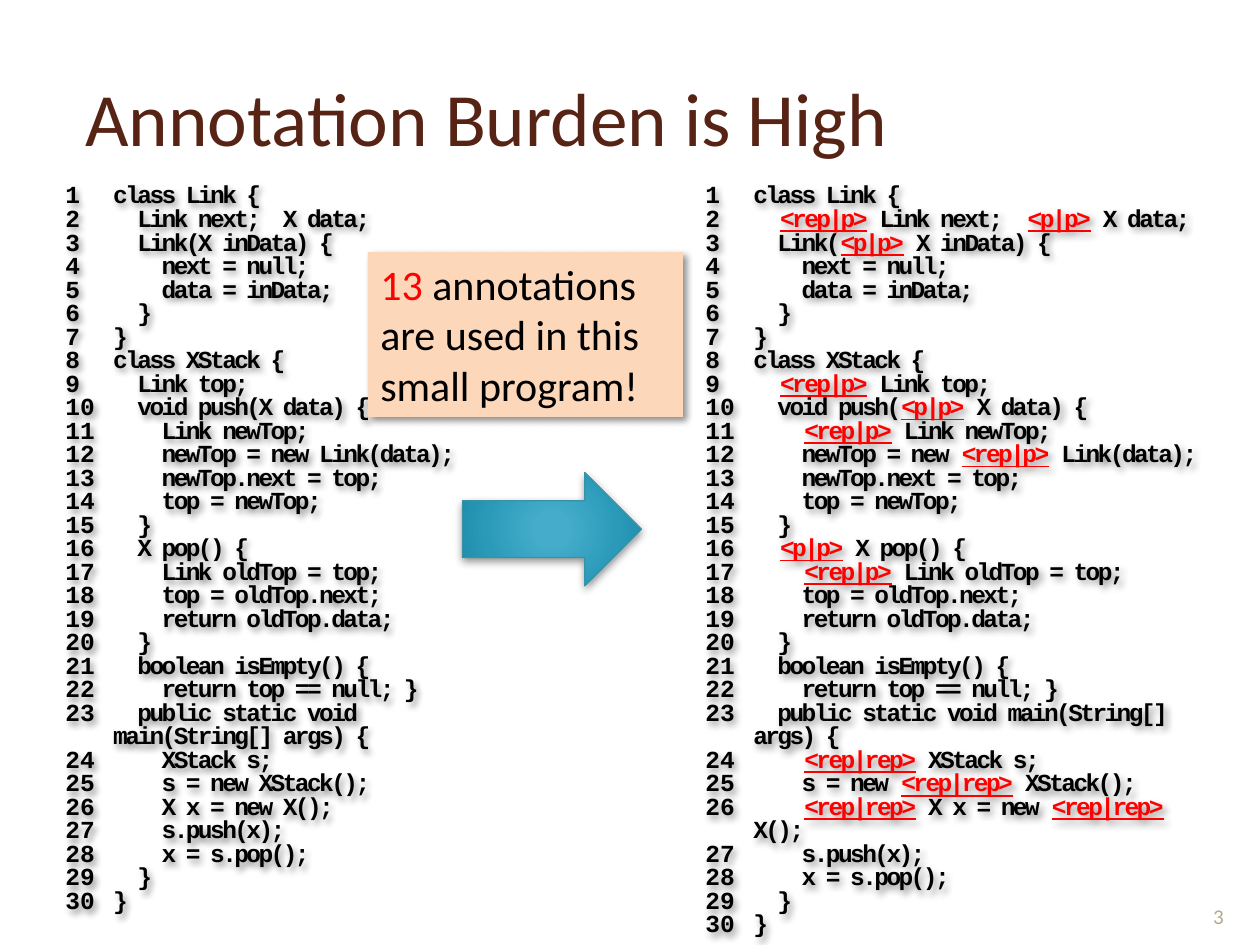
from lxml import etree
from pptx import Presentation
from pptx.dml.color import RGBColor
from pptx.enum.shapes import MSO_SHAPE
from pptx.enum.text import MSO_ANCHOR, MSO_AUTO_SIZE, PP_ALIGN
from pptx.oxml import parse_xml
from pptx.oxml.ns import nsdecls, qn
from pptx.util import Inches, Pt

RIGHT_ARROW, RECTANGLE = MSO_SHAPE.RIGHT_ARROW, MSO_SHAPE.RECTANGLE
MIDDLE, BOTTOM, TOP = MSO_ANCHOR.MIDDLE, MSO_ANCHOR.BOTTOM, MSO_ANCHOR.TOP
LEFT, CENTER = PP_ALIGN.LEFT, PP_ALIGN.CENTER
GROW, FIXED = MSO_AUTO_SIZE.SHAPE_TO_FIT_TEXT, MSO_AUTO_SIZE.NONE

COLORS = {
    "title": "572314",
    "code": "000000",
    "annotation": "FF0000",
    "callout": "FDD7BA",
    "arrow_line": "3891A7",
    "number": "B6A98A",
}
ARROW_STOPS = [(0, "45ACCC"), (15, "45ACCB"), (62, "2B9AB9"), (97, "1C8AA7"), (100, "0E89A7")]

TITLE_FONT = {"name": "Calibri", "size": Pt(43)}
CALLOUT_FONT = {"name": "Calibri", "size": Pt(24)}
NUMBER_FONT = {"name": "Calibri", "size": Pt(12)}
CODE_FONT = {"name": "Courier New", "size": Pt(14), "bold": True}

ANNOTATIONS = ("<rep|rep>", "<rep|p>", "<p|p>")
ANNOTATED_CODE = """class Link {
  <rep|p> Link next;  <p|p> X data;
  Link(<p|p> X inData) {
    next = null;
    data = inData;
  }
}
class XStack {
  <rep|p> Link top;
  void push(<p|p> X data) {
    <rep|p> Link newTop;
    newTop = new <rep|p> Link(data);
    newTop.next = top;
    top = newTop;
  }
  <p|p> X pop() {
    <rep|p> Link oldTop = top;
    top = oldTop.next;
    return oldTop.data;
  }
  boolean isEmpty() {
    return top == null; }
  public static void main(String[] args) {
    <rep|rep> XStack s;
    s = new <rep|rep> XStack();
    <rep|rep> X x = new <rep|rep> X();
    s.push(x);
    x = s.pop();
  }
}"""


def apply_format(target, values):
    for attribute, value in values.items():
        setattr(target, attribute, value)


def add_run(paragraph, text, font, color):
    run = paragraph.add_run()
    run.text = text
    apply_format(run.font, font)
    run.font.color.rgb = RGBColor.from_string(COLORS[color])
    return run


def add_text_box(slide, box, anchor=TOP, auto_size=FIXED):
    area = slide.shapes.add_textbox(*map(Inches, box))
    apply_format(area.text_frame, {
        "word_wrap": True, "vertical_anchor": anchor, "auto_size": auto_size})
    return area


def add_label(slide, box, text, font, color, anchor, align=LEFT):
    paragraph = add_text_box(slide, box, anchor).text_frame.paragraphs[0]
    paragraph.alignment = align
    add_run(paragraph, text, font, color)


def add_shadow(shape, blur, distance, angle):
    shape.shadow.inherit = False
    effects = shape._element.spPr.find(qn("a:effectLst"))
    effects.append(parse_xml(
        f'<a:outerShdw {nsdecls("a")} blurRad="{Pt(blur)}" dist="{Pt(distance)}" '
        f'dir="{angle * 60000}" algn="ctr" rotWithShape="0">'
        '<a:srgbClr val="000000"><a:alpha val="43000"/></a:srgbClr></a:outerShdw>'))


def number_line(paragraph):
    paragraph.line_spacing = 0.8
    properties = paragraph._p.get_or_add_pPr()
    properties.set("marL", str(Inches(0.38)))
    properties.set("indent", str(Inches(-0.38)))
    etree.SubElement(properties, qn("a:buFont"), typeface=CODE_FONT["name"])
    etree.SubElement(properties, qn("a:buAutoNum"), type="arabicPlain")


def split_annotations(line):
    for annotation in ANNOTATIONS:
        line = line.replace(annotation, f"\t{annotation}\t")
    return [part for part in line.split("\t") if part]


def strip_annotations(code):
    for annotation in ANNOTATIONS:
        code = code.replace(f"{annotation} ", "")
    return code


def add_code(slide, box, code):
    listing = add_text_box(slide, box, auto_size=GROW)
    add_shadow(listing, 4, 3, 45)
    frame = listing.text_frame
    for index, line in enumerate(code.splitlines()):
        paragraph = frame.add_paragraph() if index else frame.paragraphs[0]
        number_line(paragraph)
        for part in split_annotations(line):
            annotated = part in ANNOTATIONS
            run = add_run(paragraph, part, CODE_FONT, "annotation" if annotated else "code")
            run.font.underline = annotated
            run._r.get_or_add_rPr().set("spc", "-150")


def add_arrow(slide, box):
    arrow = slide.shapes.add_shape(RIGHT_ARROW, *map(Inches, box))
    arrow.fill.background()
    stops = "".join(
        f'<a:gs pos="{position * 1000}"><a:srgbClr val="{color}"/></a:gs>'
        for position, color in ARROW_STOPS)
    gradient = parse_xml(
        f'<a:gradFill {nsdecls("a")} rotWithShape="1"><a:gsLst>{stops}</a:gsLst>'
        '<a:path path="circle"><a:fillToRect l="50000" t="50000" r="50000" b="50000"/>'
        '</a:path></a:gradFill>')
    properties = arrow._element.spPr
    properties.replace(properties.find(qn("a:noFill")), gradient)
    arrow.line.color.rgb = RGBColor.from_string(COLORS["arrow_line"])
    arrow.line.width = Pt(0.75)
    add_shadow(arrow, 5, 2, 90)


def add_callout(slide, box, parts):
    callout = slide.shapes.add_shape(RECTANGLE, *map(Inches, box))
    callout.fill.solid()
    callout.fill.fore_color.rgb = RGBColor.from_string(COLORS["callout"])
    callout.line.fill.background()
    add_shadow(callout, 4, 3, 45)
    frame = callout.text_frame
    apply_format(frame, {"word_wrap": True, "vertical_anchor": TOP, "auto_size": GROW})
    frame.paragraphs[0].alignment = LEFT
    for text, color in parts:
        add_run(frame.paragraphs[0], text, CALLOUT_FONT, color)


def main():
    deck = Presentation()
    apply_format(deck, {"slide_width": Inches(10), "slide_height": Inches(7.5)})
    slide = deck.slides.add_slide(deck.slide_layouts[6])
    add_code(slide, (0.42, 1.42, 3.58, 5.95), strip_annotations(ANNOTATED_CODE))
    add_code(slide, (5.5, 1.42, 4.25, 5.95), ANNOTATED_CODE)
    add_label(slide, (0.58, 0.3, 8.87, 1.25), "Annotation Burden is High",
              TITLE_FONT, "title", MIDDLE)
    add_arrow(slide, (3.67, 3.75, 1.42, 0.9))
    add_callout(slide, (2.92, 2, 2.5, 1.31), [
        ("13 ", "annotation"), ("annotations are used in this small program!", "code")])
    add_label(slide, (9.42, 6.9, 0.5, 0.52), "3", NUMBER_FONT, "number", BOTTOM, CENTER)
    deck.save("out.pptx")


if __name__ == "__main__":
    main()
